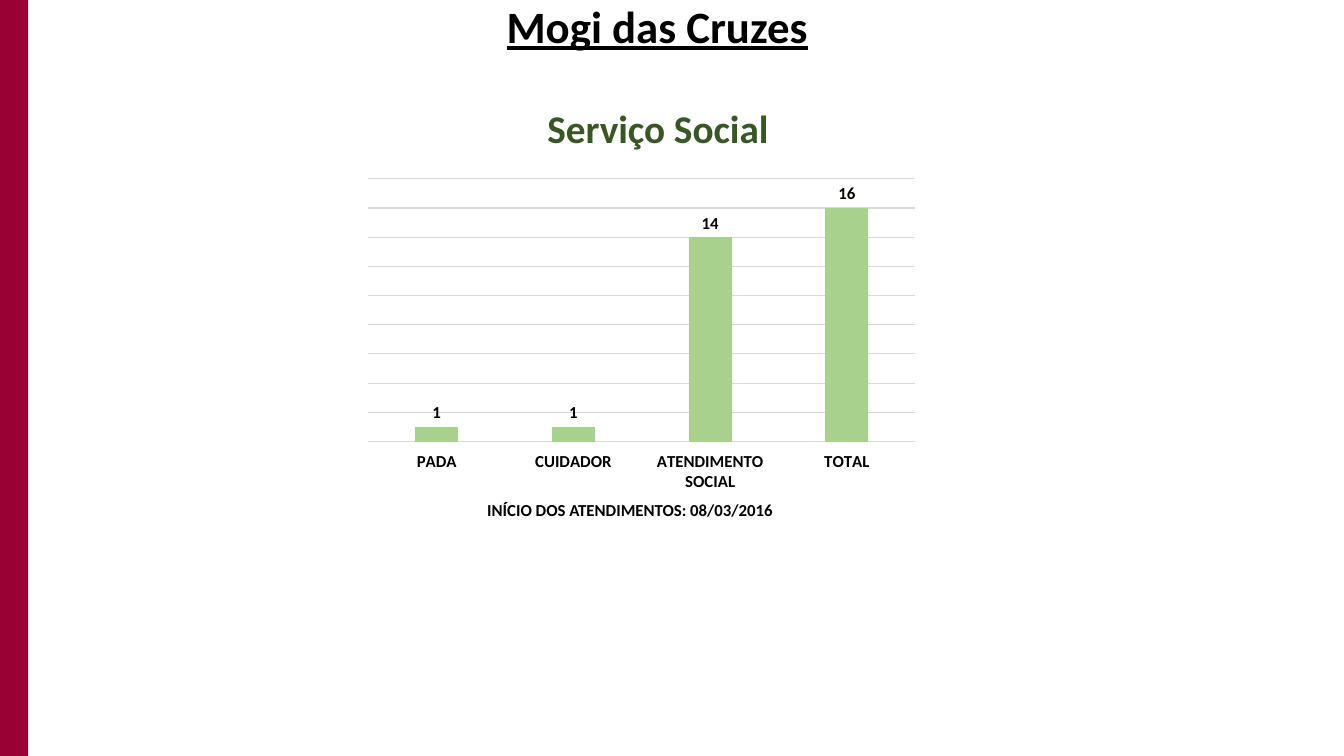
from dataclasses import dataclass

from pptx import Presentation
from pptx.chart.data import CategoryChartData
from pptx.dml.color import RGBColor
from pptx.enum.chart import XL_CHART_TYPE, XL_LABEL_POSITION, XL_TICK_LABEL_POSITION, XL_TICK_MARK
from pptx.enum.shapes import MSO_SHAPE
from pptx.enum.text import MSO_ANCHOR, PP_ALIGN
from pptx.util import Inches, Pt

COLUMNS = XL_CHART_TYPE.COLUMN_CLUSTERED
OUTSIDE = XL_LABEL_POSITION.OUTSIDE_END
LABELS_LOW = XL_TICK_LABEL_POSITION.LOW
NO_TICK = XL_TICK_MARK.NONE
RECT = MSO_SHAPE.RECTANGLE
TOP = MSO_ANCHOR.TOP
CENTER = PP_ALIGN.CENTER
WIDTH, HEIGHT = 13.33, 7.5


@dataclass(frozen=True)
class Theme:
    """Colours and type sizes of the slide."""
    font: str = "Calibri"
    band: str = "990033"
    ink: str = "000000"
    heading: str = "385723"
    bar: str = "A9D18E"
    grid: str = "D9D9D9"
    title_size: int = 32
    heading_size: int = 28
    label_size: int = 12
    chart_size: int = 10


THEME = Theme()


def box(left, top, width, height):
    """Turn shares of the slide, in percent, into lengths."""
    return (Inches(WIDTH * left / 100), Inches(HEIGHT * top / 100),
            Inches(WIDTH * width / 100), Inches(HEIGHT * height / 100))


def style_font(font, size, color, bold=True):
    """Set face, size, colour and weight of a font."""
    font.name = THEME.font
    font.size = Pt(size)
    font.bold = bold
    font.color.rgb = RGBColor.from_string(color)


def style_line(line):
    """Draw a line in the thin grid style."""
    line.color.rgb = RGBColor.from_string(THEME.grid)
    line.width = Pt(0.75)


def add_band(s, area):
    """Add a plain filled band."""
    sp = s.shapes.add_shape(RECT, *area)
    sp.shadow.inherit = False
    sp.fill.solid()
    sp.fill.fore_color.rgb = RGBColor.from_string(THEME.band)
    sp.line.fill.background()


def add_text(s, area, text, size, color, underline=None, heading=True):
    """Add one centred bold line of text."""
    tf = s.shapes.add_textbox(*area).text_frame
    tf.word_wrap = True
    tf.vertical_anchor = TOP
    p = tf.paragraphs[0]
    p.alignment = CENTER
    if heading:
        p.line_spacing = 0.9
        p.space_before = Pt(10)
    r = p.add_run()
    r.text = text
    style_font(r.font, size, color)
    r.font.underline = underline


def add_columns(s, area, values):
    """Add a column chart with value labels and a hidden value axis."""
    data = CategoryChartData()
    data.categories = list(values)
    data.add_series("Series 1", list(values.values()))
    chart = s.shapes.add_chart(COLUMNS, *area, data).chart
    chart.has_legend = False
    chart.has_title = False
    style_font(chart.font, THEME.chart_size, THEME.ink, bold=False)

    axis = chart.category_axis
    axis.major_tick_mark = axis.minor_tick_mark = NO_TICK
    axis.tick_label_position = LABELS_LOW
    style_font(axis.tick_labels.font, THEME.label_size, THEME.ink)
    style_line(axis.format.line)

    axis = chart.value_axis
    axis.visible = False
    axis.minimum_scale, axis.maximum_scale, axis.major_unit = 0, 18, 2
    axis.has_major_gridlines = True
    style_line(axis.major_gridlines.format.line)

    plot = chart.plots[0]
    plot.gap_width, plot.overlap = 219, -27
    plot.vary_by_categories = False
    series = plot.series[0]
    series.format.fill.solid()
    series.format.fill.fore_color.rgb = RGBColor.from_string(THEME.bar)
    labels = series.data_labels
    labels.show_value = True
    labels.position = OUTSIDE
    style_font(labels.font, THEME.label_size, THEME.ink)


def main():
    """Build the slide and save it."""
    prs = Presentation()
    prs.slide_width, prs.slide_height = Inches(WIDTH), Inches(HEIGHT)
    s = prs.slides.add_slide(prs.slide_layouts[6])
    add_band(s, box(0, 0, 2.1, 100))
    add_text(s, box(11.4, 0, 75, 7.73), "Mogi das Cruzes",
             THEME.title_size, THEME.ink, underline=True)
    add_columns(s, box(26.56, 22.8, 42.39, 43.07),
                {"PADA": 1, "CUIDADOR": 1, "ATENDIMENTO SOCIAL": 14, "TOTAL": 16})
    add_text(s, box(27.16, 65.47, 39.46, 4), "INÍCIO DOS ATENDIMENTOS: 08/03/2016",
             THEME.label_size, THEME.ink, heading=False)
    add_text(s, box(27.16, 13.87, 43.59, 7.73), "Serviço Social",
             THEME.heading_size, THEME.heading)
    prs.save("out.pptx")


if __name__ == "__main__":
    main()
